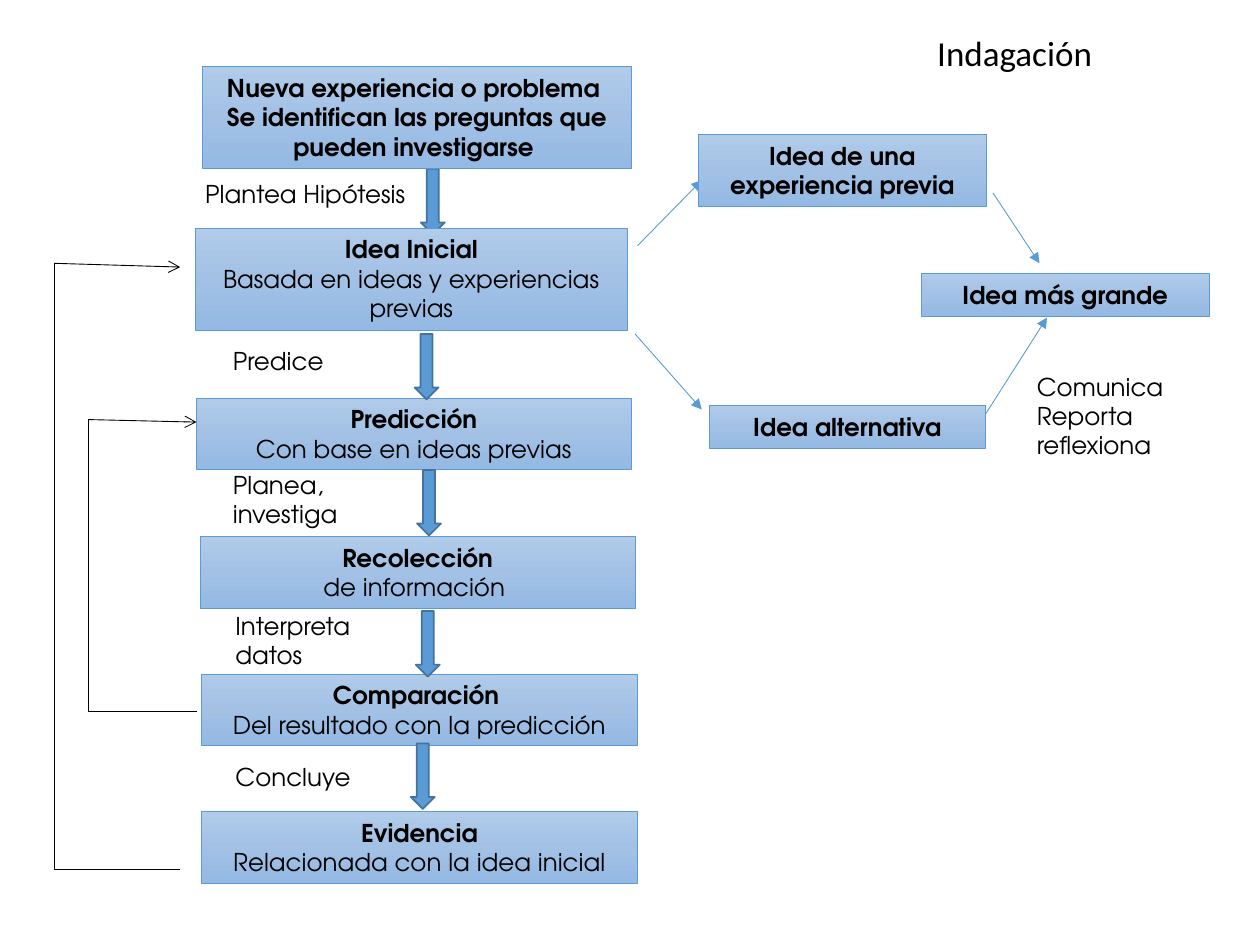
"""Build the inquiry cycle slide: process boxes, labels, arrows and return loops."""
from copy import deepcopy

from lxml.etree import SubElement
from pptx import Presentation
from pptx.dml.color import RGBColor
from pptx.enum.shapes import MSO_CONNECTOR, MSO_SHAPE
from pptx.enum.text import MSO_ANCHOR, MSO_AUTO_SIZE, PP_ALIGN
from pptx.oxml.ns import qn
from pptx.util import Inches, Pt

COLUMNS, ROWS = 100, 75
COLORS = {
    "text": "000000", "blue": "5B9BD5", "arrow_edge": "43739E",
    "light": "B1CBE9", "middle": "A3C1E5", "deep": "93B9E4",
}
BODY_FONT = "TeX Gyre Adventor"
ONE_LINE, TWO_LINES, THREE_LINES = 3.4, 5.7, 8.1

TITLE = ("Indagación", (73.4, 1.7, 34.4, 5.4))
BOXES = [
    ((16.1, 5.3, 34, THREE_LINES), [("Nueva experiencia o problema ", True),
                                    ("Se identifican las preguntas que pueden investigarse ", True)]),
    ((15.5, 18.1, 34.3, THREE_LINES), [("Idea Inicial", True),
                                       ("Basada en ideas y experiencias previas", False)]),
    ((15.6, 31.6, 34.5, TWO_LINES), [("Predicción", True), ("Con base en ideas previas", False)]),
    ((15.9, 42.6, 34.5, TWO_LINES), [("Recolección", True), ("de información ", False)]),
    ((16, 53.5, 34.6, TWO_LINES), [("Comparación ", True), ("Del resultado con la predicción", False)]),
    ((16, 64.4, 34.6, TWO_LINES), [("Evidencia", True), ("Relacionada con la idea inicial", False)]),
    ((55.4, 10.7, 22.9, TWO_LINES), [("Idea de una experiencia previa", True)]),
    ((56.3, 32.2, 21.9, ONE_LINE), [("Idea alternativa", True)]),
    ((73.1, 21.7, 22.9, ONE_LINE), [("Idea más grande", True)]),
]
LABELS = [
    ((15.3, 13.7, 22.1, TWO_LINES), ["Plantea Hipótesis"]),
    ((17.5, 27, 15.4, ONE_LINE), ["Predice"]),
    ((17.5, 36.8, 15.4, TWO_LINES), ["Planea, investiga"]),
    ((17.7, 48, 15.4, TWO_LINES), ["Interpreta datos"]),
    ((17.7, 60, 15.4, ONE_LINE), ["Concluye"]),
    ((81.3, 29, 14.8, THREE_LINES), ["Comunica", "Reporta", "reflexiona"]),
]
ARROW_SIZE = (1.9, 5.2)
FIRST_ARROW = (33.4, 13.4)
STEP_ARROWS = [(32.9, 26.5), (33.1, 37.3), (33, 48.5), (32.6, 59)]
IDEA_LINKS = [
    (50.6, 19.5, 55.7, 14.3), (50.4, 26.5, 55.7, 32.5),
    (78.8, 15.3, 82.5, 20.9), (78.2, 32.9, 83.1, 25.2),
]
RETURN_LOOPS = [
    {"left": 4.3, "right": 14.3, "top": 20.9, "tip": 21.2, "bottom": 69},
    {"left": 7, "right": 15.6, "top": 33.3, "tip": 33.5, "bottom": 56.5},
]

presentation = Presentation()
presentation.slide_width, presentation.slide_height = Inches(10), Inches(7.5)
slide = presentation.slides.add_slide(presentation.slide_layouts[6])


def color(name):
    return RGBColor.from_string(COLORS[name])


def place(values):
    units = (presentation.slide_width / COLUMNS, presentation.slide_height / ROWS)
    return [round(value * units[index % 2]) for index, value in enumerate(values)]


def write(shape, lines, align=PP_ALIGN.LEFT, size=14, font=BODY_FONT):
    frame = shape.text_frame
    frame.word_wrap = True
    frame.auto_size = MSO_AUTO_SIZE.SHAPE_TO_FIT_TEXT
    frame.vertical_anchor = MSO_ANCHOR.TOP
    for index, (text, bold) in enumerate(lines):
        paragraph = frame.add_paragraph() if index else frame.paragraphs[0]
        paragraph.alignment = align
        run = paragraph.add_run()
        run.text = text
        run.font.name, run.font.size, run.font.bold = font, Pt(size), bold
        run.font.color.rgb = color("text")
    return frame


def add_box(area, lines):
    shape = slide.shapes.add_shape(MSO_SHAPE.RECTANGLE, *place(area))
    shape.shadow.inherit = False
    shape.fill.gradient()
    shape.fill.gradient_angle = 270
    stop_list = shape._element.spPr.find(qn("a:gradFill")).find(qn("a:gsLst"))
    stop_list.append(deepcopy(stop_list[-1]))
    for index, name in enumerate(("light", "middle", "deep")):
        stop = shape.fill.gradient_stops[index]
        stop.position = index / 2
        stop.color.rgb = color(name)
    shape.line.color.rgb, shape.line.width = color("blue"), Pt(0.5)
    write(shape, lines, PP_ALIGN.CENTER)


def add_down_arrow(position):
    shape = slide.shapes.add_shape(MSO_SHAPE.DOWN_ARROW, *place(position + ARROW_SIZE))
    shape.shadow.inherit = False
    shape.fill.solid()
    shape.fill.fore_color.rgb = color("blue")
    shape.line.color.rgb, shape.line.width = color("arrow_edge"), Pt(1)


def add_line(ends, color_name, head=None, kind=MSO_CONNECTOR.STRAIGHT):
    connector = slide.shapes.add_connector(kind, *place(ends))
    connector.line.color.rgb, connector.line.width = color(color_name), Pt(0.5)
    if head:
        SubElement(connector.line._get_or_add_ln(), qn("a:tailEnd"), type=head)
    SubElement(connector._element.spPr, qn("a:effectLst"))
    return connector


def add_return_loop(left, right, top, tip, bottom):
    elbow = add_line((left, top, right, bottom), "text", kind=MSO_CONNECTOR.ELBOW)
    properties = elbow._element.spPr
    properties.find(qn("a:prstGeom")).set("prst", "bentConnector2")
    properties.find(qn("a:xfrm")).set("rot", str(180 * 60000))
    add_line((left, top, right, tip), "text", "arrow")


title_text, title_area = TITLE
title_frame = write(slide.shapes.add_textbox(*place(title_area)),
                    [(title_text, False)], size=20, font="Calibri")
title_frame.auto_size = MSO_AUTO_SIZE.NONE
title_frame.vertical_anchor = MSO_ANCHOR.MIDDLE
title_frame.paragraphs[0].line_spacing = 0.9

add_down_arrow(FIRST_ARROW)
for link in IDEA_LINKS:
    add_line(link, "blue", "triangle")
for box_area, box_lines in BOXES:
    add_box(box_area, box_lines)
for arrow in STEP_ARROWS:
    add_down_arrow(arrow)
for label_area, label_lines in LABELS:
    write(slide.shapes.add_textbox(*place(label_area)), [(line, False) for line in label_lines])
for loop in RETURN_LOOPS:
    add_return_loop(**loop)

presentation.save("out.pptx")
